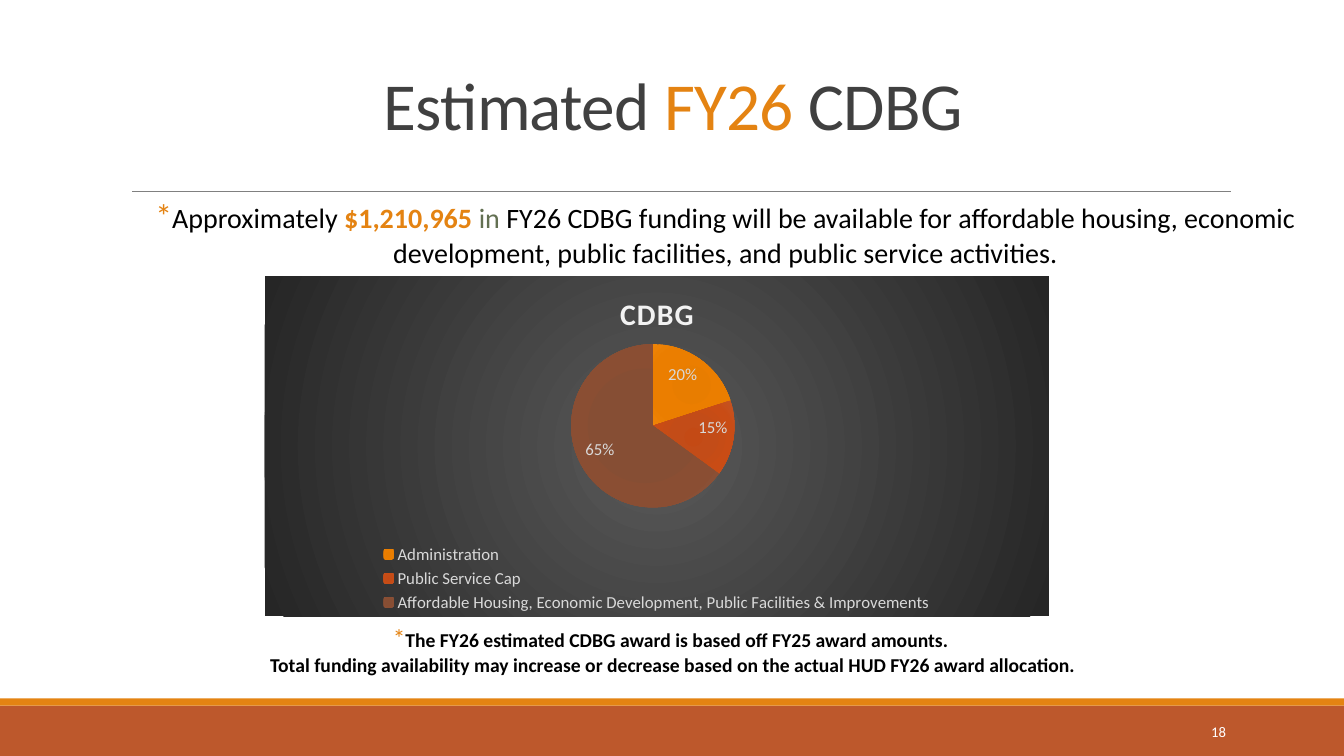
"""Build the slide on estimated FY26 CDBG funding."""
from dataclasses import dataclass

from lxml import etree
from pptx import Presentation
from pptx.chart.chart import Chart
from pptx.chart.data import CategoryChartData
from pptx.dml.color import RGBColor
from pptx.enum.chart import XL_CHART_TYPE, XL_LABEL_POSITION, XL_LEGEND_POSITION
from pptx.enum.shapes import MSO_CONNECTOR, MSO_SHAPE
from pptx.enum.text import MSO_ANCHOR, MSO_AUTO_SIZE, PP_ALIGN
from pptx.oxml import parse_xml
from pptx.oxml.ns import nsdecls, qn
from pptx.slide import Slide
from pptx.text.text import Font, TextFrame
from pptx.util import Pt

PX = 9525
FACE = "Calibri"
PIE = XL_CHART_TYPE.PIE
INSIDE = XL_LABEL_POSITION.INSIDE_END
BELOW = XL_LEGEND_POSITION.BOTTOM
STRAIGHT = MSO_CONNECTOR.STRAIGHT
RECT = MSO_SHAPE.RECTANGLE
TOP, MIDDLE, BOTTOM = MSO_ANCHOR.TOP, MSO_ANCHOR.MIDDLE, MSO_ANCHOR.BOTTOM
FIXED, GROW = MSO_AUTO_SIZE.NONE, MSO_AUTO_SIZE.SHAPE_TO_FIT_TEXT
CENTER, RIGHT = PP_ALIGN.CENTER, PP_ALIGN.RIGHT

COLORS = {
    "rust": "BD582C", "orange": "E48312", "rule": "808080", "dark": "404040",
    "black": "000000", "olive": "637052", "white": "FFFFFF",
    "label": "D9D9D9", "head": "F2F2F2",
}

Box = tuple[int, int, int, int]
Stops = dict[int, str]


@dataclass
class Bar:
    box: Box
    color: str


@dataclass
class Run:
    text: str
    size: float
    color: str
    bold: bool = False


@dataclass
class Note:
    box: Box
    lines: list[list[Run]]
    align: PP_ALIGN = CENTER
    anchor: MSO_ANCHOR = TOP
    fit: MSO_AUTO_SIZE = GROW


@dataclass
class Slice:
    name: str
    value: int
    stops: Stops


BARS = [Bar((0, 672, 1280, 48), "rust"), Bar((0, 665, 1280, 7), "orange")]
RULE = (126, 182, 1172, 182)
TITLE = Note((83, 33, 1116, 109), [[
    Run("Estimated", 48, "dark"), Run(" FY26 ", 48, "orange"), Run("CDBG", 48, "dark"),
]], anchor=BOTTOM, fit=FIXED)
NOTES = [
    Note((102, 181, 1178 - 102 + 102, 104), [[
        Run("*", 24, "orange"),
        Run("Approximately ", 20, "black"),
        Run("$1,210,965 ", 20, "orange", True),
        Run("in ", 20, "olive"),
        Run("FY26 CDBG funding will be available for affordable housing, economic "
            "development, public facilities, and public service activities.", 20, "black"),
    ]]),
    Note((83, 588, 1116, 61), [
        [Run("*", 18, "orange"),
         Run("The FY26 estimated CDBG award is based off FY25 award amounts. ",
             14, "black", True)],
        [Run("Total funding availability may increase or decrease based on the actual "
             "HUD FY26 award allocation.", 14, "black", True)],
    ]),
    Note((1040, 678, 137, 38), [[Run("18", 10.5, "white")]], RIGHT, MIDDLE, FIXED),
]
CHART = (252, 263, 747, 324)
PLOT = {"x": 0.39, "y": 0.2, "w": 0.21, "h": 0.48}
SLICES = [
    Slice("Administration", 20,
          {0: "E57B00", 34: "E87D00", 70: "EB7E00", 100: "EF8407"}),
    Slice("Public Service Cap", 15,
          {0: "C44A15", 34: "C34C18", 70: "C94C15", 100: "C45525"}),
    Slice("Affordable Housing, Economic Development, Public Facilities & Improvements", 65,
          {0: "874C32", 34: "864E34", 70: "8A4E33", 100: "8A553D"}),
]
BACK = {0: "595959", 100: "262626"}


def scale(box: Box) -> list[int]:
    return [n * PX for n in box]


def tint(name: str) -> RGBColor:
    return RGBColor.from_string(COLORS[name])


def style(font: Font, size: float, color: str, bold: bool = False) -> None:
    for key, value in {"name": FACE, "size": Pt(size), "bold": bold}.items():
        setattr(font, key, value)
    font.color.rgb = tint(color)


def write(frame: TextFrame, note: Note) -> None:
    form = {"word_wrap": True, "auto_size": note.fit, "vertical_anchor": note.anchor}
    for key, value in form.items():
        setattr(frame, key, value)
    for i, line in enumerate(note.lines):
        para = frame.add_paragraph() if i else frame.paragraphs[0]
        para.alignment = note.align
        for item in line:
            run = para.add_run()
            run.text = item.text
            style(run.font, item.size, item.color, item.bold)


def add_bar(slide: Slide, bar: Bar) -> None:
    shape = slide.shapes.add_shape(RECT, *scale(bar.box))
    shape.shadow.inherit = False
    shape.fill.solid()
    shape.fill.fore_color.rgb = tint(bar.color)
    shape.line.fill.background()


def add_rule(slide: Slide) -> None:
    rule = slide.shapes.add_connector(STRAIGHT, *scale(RULE))
    rule.line.color.rgb = tint("rule")
    rule.line.width = Pt(0.5)
    etree.SubElement(rule._element.spPr, qn("a:effectLst"))


def add_title(slide: Slide) -> None:
    title = slide.shapes.title
    sides = ("left", "top", "width", "height")
    for key, value in zip(sides, scale(TITLE.box)):
        setattr(title, key, value)
    write(title.text_frame, TITLE)
    para = title.text_frame.paragraphs[0]
    para.line_spacing = 0.85
    for run in para.runs:
        run.font._element.set("spc", "-50")


def radial(stops: Stops, edge: int) -> etree._Element:
    marks = "".join(f'<a:gs pos="{at * 1000}"><a:srgbClr val="{color}"/></a:gs>'
                    for at, color in stops.items())
    rect = " ".join(f'{side}="{edge * 1000}"' for side in "ltrb")
    return parse_xml(
        f'<a:gradFill {nsdecls("a")}><a:gsLst>{marks}</a:gsLst>'
        f'<a:path path="circle"><a:fillToRect {rect}/></a:path></a:gradFill>')


def set_back(chart: Chart) -> None:
    props = parse_xml(f'<c:spPr {nsdecls("c", "a")}><a:ln><a:noFill/></a:ln></c:spPr>')
    props.insert(0, radial(BACK, 50))
    chart._chartSpace.find(qn("c:txPr")).addprevious(props)


def set_plot(chart: Chart) -> None:
    area = chart._chartSpace.chart.plotArea
    for old in area.findall(qn("c:layout")):
        area.remove(old)
    parts = '<c:layoutTarget val="inner"/><c:xMode val="edge"/><c:yMode val="edge"/>'
    parts += "".join(f'<c:{key} val="{value}"/>' for key, value in PLOT.items())
    area.insert(0, parse_xml(
        f'<c:layout {nsdecls("c")}><c:manualLayout>{parts}</c:manualLayout></c:layout>'))


def add_pie(slide: Slide) -> None:
    data = CategoryChartData()
    data.categories = [part.name for part in SLICES]
    data.add_series("CDBG", [part.value for part in SLICES])
    chart = slide.shapes.add_chart(PIE, *scale(CHART), data).chart
    style(chart.font, 10, "black")
    set_back(chart)
    set_plot(chart)

    chart.has_title = True
    run = chart.chart_title.text_frame.paragraphs[0].add_run()
    run.text = "CDBG"
    style(run.font, 21.3, "head", True)
    run.font._element.set("spc", "100")
    chart.chart_title.include_in_layout = False

    chart.has_legend = True
    chart.legend.position = BELOW
    chart.legend.include_in_layout = False
    style(chart.legend.font, 12, "label")

    plot = chart.plots[0]
    plot.vary_by_categories = True
    plot.has_data_labels = True
    form = {"show_percentage": True, "show_value": False, "number_format": "0%",
            "number_format_is_linked": False, "position": INSIDE}
    for key, value in form.items():
        setattr(plot.data_labels, key, value)
    style(plot.data_labels.font, 12, "label")

    series = plot.series[0]
    for i, part in enumerate(SLICES):
        series.points[i].format.line.fill.background()
        props = series._element.findall(qn("c:dPt"))[i].find(qn("c:spPr"))
        props.insert(0, radial(part.stops, 100))


def main() -> None:
    deck = Presentation()
    deck.slide_width, deck.slide_height = scale((1280, 720))
    slide = deck.slides.add_slide(deck.slide_layouts[5])
    for bar in BARS:
        add_bar(slide, bar)
    add_rule(slide)
    add_title(slide)
    add_pie(slide)
    for note in NOTES:
        write(slide.shapes.add_textbox(*scale(note.box)).text_frame, note)
    deck.save("out.pptx")


if __name__ == "__main__":
    main()
